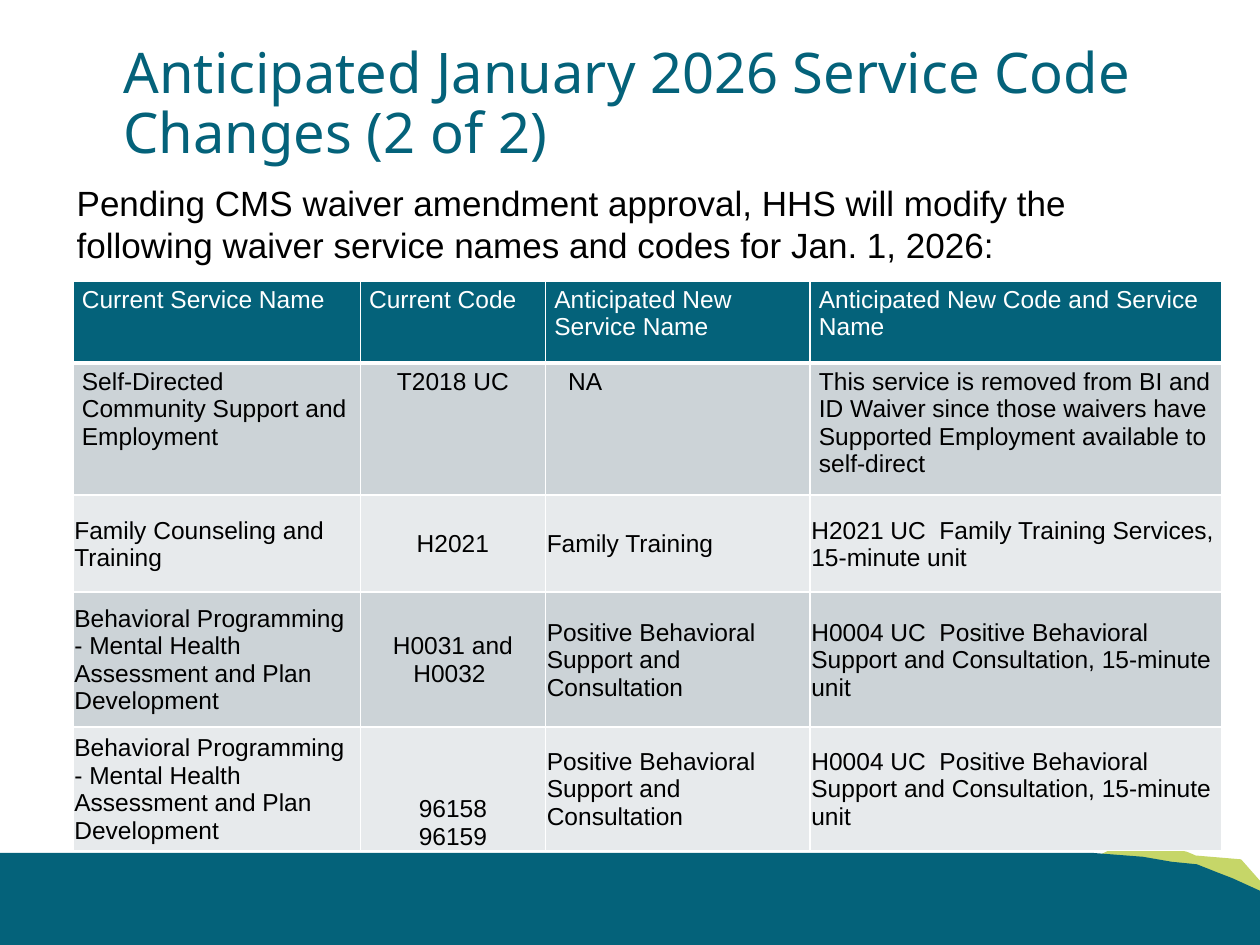
from dataclasses import dataclass

from lxml.etree import SubElement
from pptx import Presentation
from pptx.dml.color import RGBColor
from pptx.enum.text import MSO_ANCHOR, PP_ALIGN
from pptx.oxml.ns import qn
from pptx.util import Inches, Pt


@dataclass(frozen=True)
class Theme:
    """Colours, fonts and type sizes of the deck."""

    teal: str = "04627A"
    lime: str = "C6D668"
    white: str = "FFFFFF"
    black: str = "000000"
    bands: tuple = ("CCD3D7", "E7EAEC")
    title_font: str = "Noto Sans"
    body_font: str = "Arial"
    title_size: int = 32
    intro_size: int = 20
    table_size: int = 14


THEME = Theme()

TITLE = "Anticipated January 2026 Service Code Changes (2 of 2)"
INTRO = (
    "Pending CMS waiver amendment approval, HHS will modify the "
    "following waiver service names and codes for Jan. 1, 2026:"
)
BEHAVIORAL = "Behavioral Programming - Mental Health Assessment and Plan Development"
POSITIVE = "Positive Behavioral Support and Consultation"
POSITIVE_CODE = f"H0004 UC  {POSITIVE}, 15-minute unit"
ROWS = [
    ("Current Service Name", "Current Code", "Anticipated New Service Name",
     "Anticipated New Code and Service Name"),
    ("Self-Directed Community Support and Employment", "T2018 UC", "NA",
     "This service is removed from BI and ID Waiver since those waivers have "
     "Supported Employment available to self-direct"),
    ("Family Counseling and Training", "H2021", "Family Training",
     "H2021 UC  Family Training Services, 15-minute unit"),
    (BEHAVIORAL, "H0031 and H0032 ", POSITIVE, POSITIVE_CODE),
    (BEHAVIORAL, "96158\n96159", POSITIVE, POSITIVE_CODE),
]
COLUMN_WIDTHS = (2.28, 1.47, 2.1, 3.27)
ROW_HEIGHTS = (0.65, 1.05, 0.77, 1.07, 0.98)
ROOMY = (0.07, 0.04, 0.07, 0.04)
TIGHT = (0.01, 0.01, 0.01, 0)

LIME_WAVE = [
    (8.82, 6.74), (8.62, 6.84), (10, 7.11), (10, 6.99), (9.85, 6.82),
    (9.49, 6.79), (9.42, 6.76), (9.23, 6.72), (8.99, 6.75),
]
TEAL_WAVE = [
    (0, 6.77), (8.68, 6.77), (9.07, 6.8), (9.3, 6.84), (9.5, 6.86),
    (9.65, 6.92), (9.78, 6.97), (10, 7.07), (10, 7.5), (0, 7.5),
]


def set_values(target, values):
    """Set each named attribute of the target."""
    for name, value in values.items():
        setattr(target, name, value)


def write_text(para, text, font, size, color):
    """Fill a paragraph and format its text."""
    para.text = text
    for span in para.runs:
        set_values(span.font, {"name": font, "size": Pt(size)})
        span.font.color.rgb = RGBColor.from_string(color)


def place(shape, left, top, width, height):
    """Move and size a shape in inches."""
    names = ("left", "top", "width", "height")
    set_values(shape, dict(zip(names, map(Inches, (left, top, width, height)))))


def add_wave(page, points, color):
    """Draw a filled outline in the footer."""
    corners = [(Inches(x), Inches(y)) for x, y in points]
    builder = page.shapes.build_freeform(*corners[0])
    builder.add_line_segments(corners[1:], close=True)
    wave = builder.convert_to_shape()
    wave.shadow.inherit = False
    wave.fill.solid()
    wave.fill.fore_color.rgb = RGBColor.from_string(color)
    wave.line.fill.background()


def add_title(page):
    """Format the title placeholder."""
    title = page.shapes.title
    place(title, 0.88, 0.11, 8.62, 1.45)
    set_values(title.text_frame, {"word_wrap": True, "vertical_anchor": MSO_ANCHOR.MIDDLE})
    para = title.text_frame.paragraphs[0]
    write_text(para, TITLE, THEME.title_font, THEME.title_size, THEME.teal)
    set_values(para, {"alignment": PP_ALIGN.LEFT, "line_spacing": 0.9})


def add_intro(page):
    """Add the sentence above the table."""
    box = page.shapes.add_textbox(*map(Inches, (0.51, 1.39, 8.99, 0.77)))
    box.text_frame.word_wrap = True
    write_text(box.text_frame.paragraphs[0], INTRO, THEME.body_font,
               THEME.intro_size, THEME.black)


def add_borders(cell, bottom_width):
    """Give a cell white borders on all sides."""
    properties = cell._tc.get_or_add_tcPr()
    for side, width in {"L": 1, "R": 1, "T": 1, "B": bottom_width}.items():
        line = SubElement(properties, qn(f"a:ln{side}"), w=str(Pt(width)))
        fill = SubElement(line, qn("a:solidFill"))
        SubElement(fill, qn("a:srgbClr"), val=THEME.white)


def format_cell(cell, text, row, column):
    """Write and style one cell by its place in the table."""
    header = row == 0
    add_borders(cell, 3 if header else 1)
    cell.fill.solid()
    fill = THEME.teal if header else THEME.bands[0 if row % 2 else 1]
    cell.fill.fore_color.rgb = RGBColor.from_string(fill)
    sides = ("margin_left", "margin_top", "margin_right", "margin_bottom")
    set_values(cell, dict(zip(sides, map(Inches, ROOMY if row < 2 else TIGHT))))
    cell.vertical_anchor = MSO_ANCHOR.TOP if row < 2 else MSO_ANCHOR.MIDDLE
    para = cell.text_frame.paragraphs[0]
    write_text(para, text, THEME.body_font, THEME.table_size,
               THEME.white if header else THEME.black)
    centred = column == 1 and not header
    para.alignment = PP_ALIGN.CENTER if centred else PP_ALIGN.LEFT


def add_code_table(page):
    """Add the table of service names and codes."""
    frame = page.shapes.add_table(
        len(ROWS), len(COLUMN_WIDTHS), Inches(0.58), Inches(2.23),
        Inches(sum(COLUMN_WIDTHS)), Inches(sum(ROW_HEIGHTS)))
    table = frame.table
    for column, width in zip(table.columns, COLUMN_WIDTHS):
        column.width = Inches(width)
    for row, height in zip(table.rows, ROW_HEIGHTS):
        row.height = Inches(height)
    for row, texts in enumerate(ROWS):
        for column, text in enumerate(texts):
            format_cell(table.cell(row, column), text, row, column)
    table.cell(1, 2).margin_left = Inches(0.18)
    table.cell(4, 1).vertical_anchor = MSO_ANCHOR.BOTTOM


def main():
    """Build and save the slide."""
    deck = Presentation()
    set_values(deck, {"slide_width": Inches(10), "slide_height": Inches(7.5)})
    page = deck.slides.add_slide(deck.slide_layouts[5])
    add_wave(page, LIME_WAVE, THEME.lime)
    add_wave(page, TEAL_WAVE, THEME.teal)
    add_title(page)
    add_intro(page)
    add_code_table(page)
    deck.save("out.pptx")


if __name__ == "__main__":
    main()
